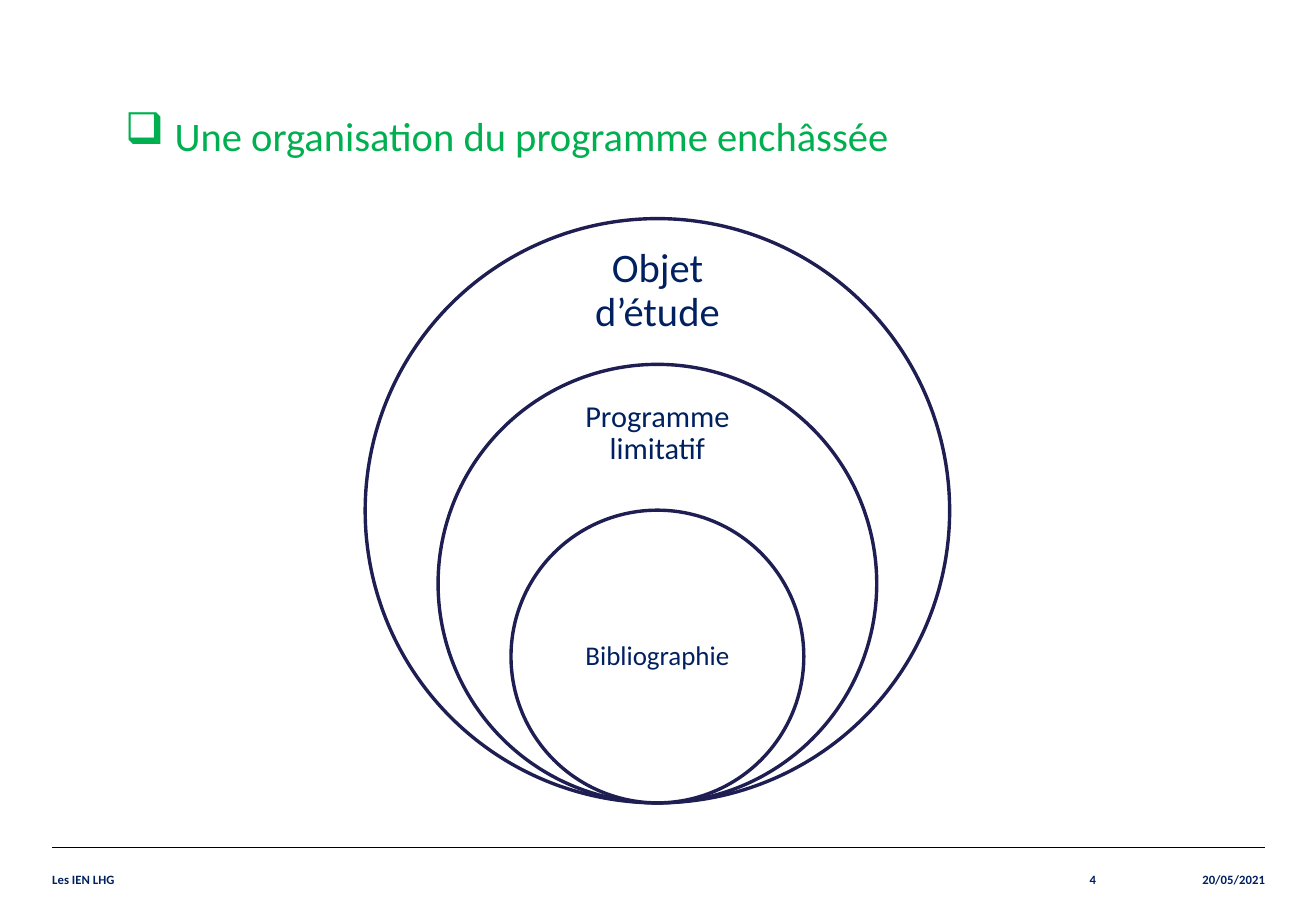
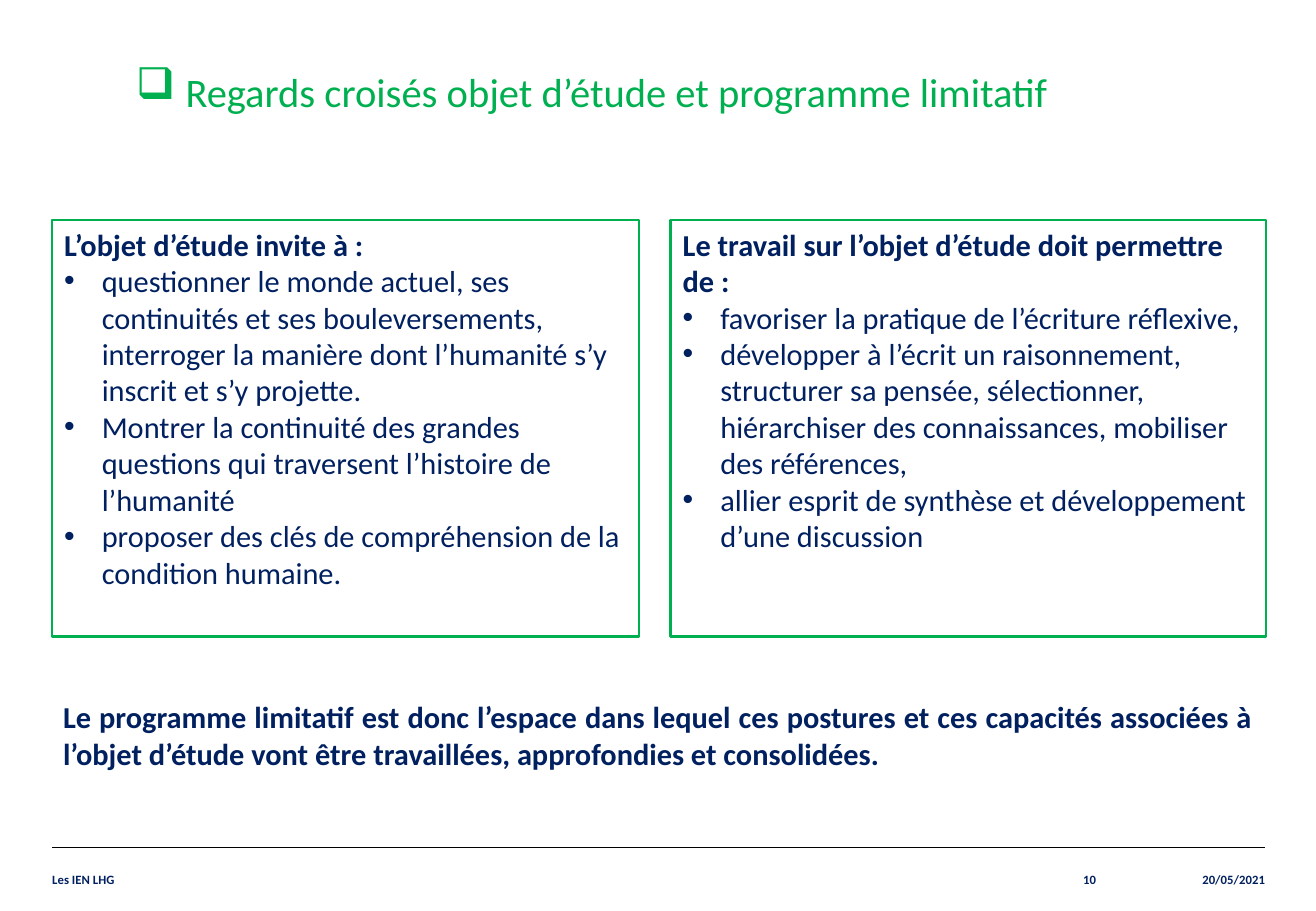
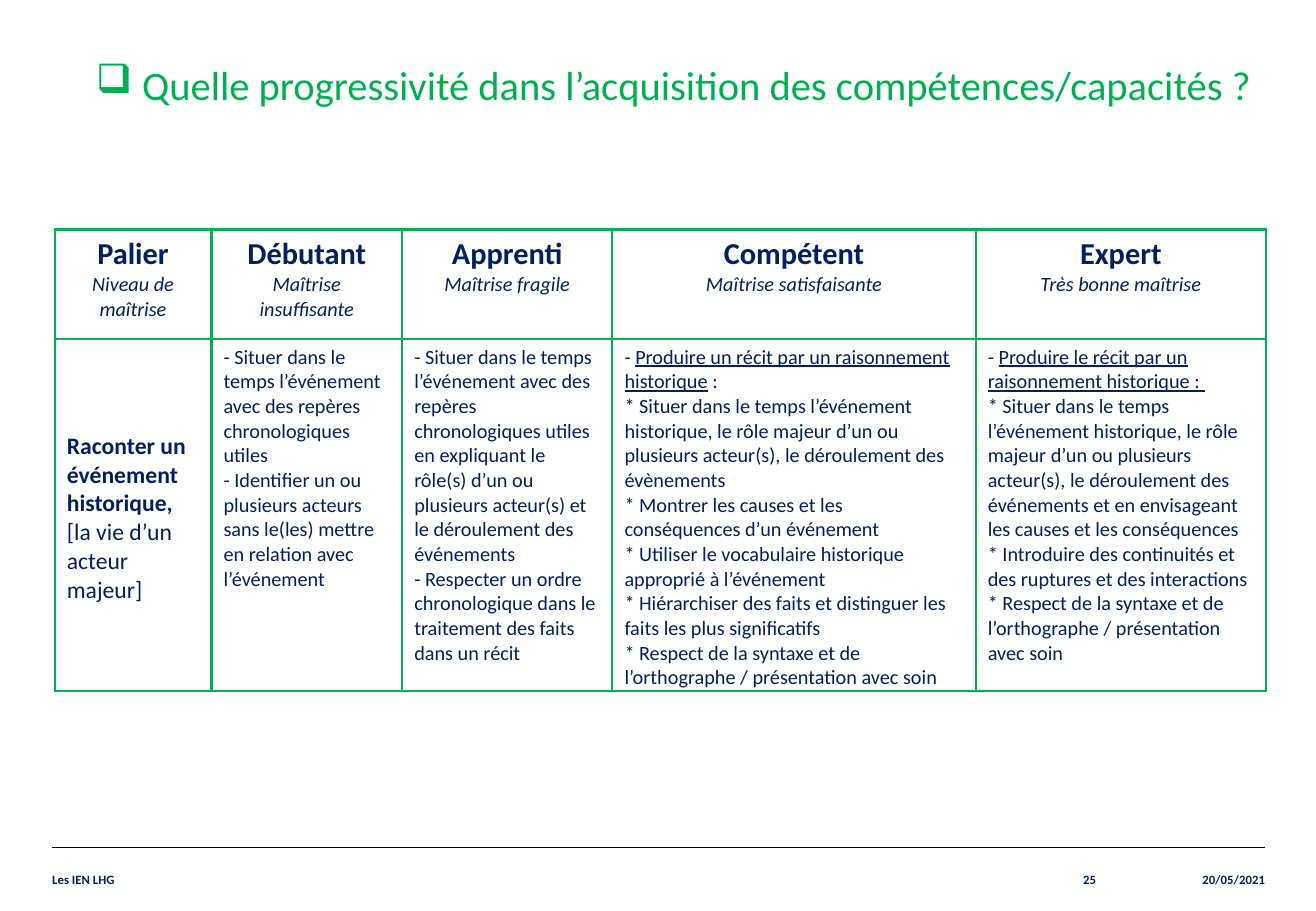
"""Build three slides on the programme's organisation, aims and skill levels."""
from lxml import etree
from pptx import Presentation
from pptx.dml.color import RGBColor
from pptx.enum import shapes, text
from pptx.oxml import ns
from pptx.util import Inches, Pt

NAVY, GREEN, RING, WHITE, BLACK = "002060", "00B050", "1E1E52", "FFFFFF", "000000"
colour = RGBColor.from_string
MIDDLE, TOP = text.MSO_ANCHOR.MIDDLE, text.MSO_ANCHOR.TOP
LEFT, CENTER, RIGHT = text.PP_ALIGN.LEFT, text.PP_ALIGN.CENTER, text.PP_ALIGN.RIGHT


def write(para, content, size, style="", hue=NAVY):
    span = para.add_run()
    span.text = content
    span.font.name, span.font.size = "Calibri", Pt(size)
    span.font.bold, span.font.italic = "b" in style, "i" in style
    span.font.underline = "u" in style
    span.font.color.rgb = colour(hue)


def add_bullet(para, indent, typeface, mark, hue):
    props = para._p.get_or_add_pPr()
    props.set("marL", str(Inches(indent)))
    props.set("indent", str(-Inches(indent)))
    tint = etree.SubElement(props, ns.qn("a:buClr"))
    etree.SubElement(tint, ns.qn("a:srgbClr"), val=hue)
    etree.SubElement(props, ns.qn("a:buFont"), typeface=typeface)
    etree.SubElement(props, ns.qn("a:buChar"), char=mark)


deck = Presentation()
deck.slide_width, deck.slide_height = Inches(10.83), Inches(7.5)

headings = [
    ("Une organisation du programme enchâssée", "4", (0.93, 0.84, 8.24, 0.54), 0.31),
    ("Regards croisés objet d’étude et programme limitatif", "10", (1.02, 0.47, 9.39, 0.54), 0.31),
    ("Quelle progressivité dans l’acquisition des compétences/capacités ?", "25",
     (0.69, 0.44, 9.72, 0.91), 0.38),
]
pages = []
for heading, number, area, indent in headings:
    page = deck.slides.add_slide(deck.slide_layouts[5])
    pages.append(page)
    title = page.shapes.title
    title.left, title.top, title.width, title.height = [Inches(side) for side in area]
    frame = title.text_frame
    frame.auto_size, frame.vertical_anchor = text.MSO_AUTO_SIZE.NONE, TOP
    para = frame.paragraphs[0]
    para.alignment = LEFT
    add_bullet(para, indent, "Wingdings", "q", GREEN)
    if indent == 0.31:
        write(para, " ", 26, hue=GREEN)
    write(para, heading, 24, hue=GREEN)

    rule = page.shapes.add_connector(
        shapes.MSO_CONNECTOR.STRAIGHT, Inches(0.43), Inches(6.98), Inches(10.41), Inches(6.98))
    rule.line.color.rgb, rule.line.width = colour(BLACK), Pt(0.75)
    etree.SubElement(rule._element.spPr, ns.qn("a:effectLst"))

    for content, left, width, align in [("Les IEN LHG", 0.43, 6.99, LEFT),
                                        (number, 7.42, 1.6, RIGHT),
                                        ("20/05/2021", 9.02, 1.39, RIGHT)]:
        box = page.shapes.add_textbox(Inches(left), Inches(6.98), Inches(width), Inches(0.52))
        frame = box.text_frame
        frame.word_wrap, frame.vertical_anchor = True, MIDDLE
        frame.margin_left = frame.margin_right = frame.margin_top = frame.margin_bottom = 0
        frame.paragraphs[0].alignment = align
        write(frame.paragraphs[0], content, 7.5, "b")

circles_page, views_page, levels_page = pages

rings = [
    ("Objet d’étude", 4.81, 2.04, 0.72, 0.19, 24),
    ("Programme limitatif", 3.61, 3.23, 0.68, 0.14, 18),
    ("Bibliographie", 2.41, 4.81, 1.2, 0.12, 16),
]
for label, diameter, top, height, inset, size in rings:
    ring = circles_page.shapes.add_shape(
        shapes.MSO_SHAPE.OVAL, Inches(5.41 - diameter / 2), Inches(6.61 - diameter),
        Inches(diameter), Inches(diameter))
    ring.shadow.inherit = False
    ring.fill.solid()
    ring.fill.fore_color.rgb = colour(WHITE)
    ring.line.color.rgb, ring.line.width = colour(RING), Pt(2)
    box = circles_page.shapes.add_textbox(Inches(4.57), Inches(top), Inches(1.68), Inches(height))
    frame = box.text_frame
    frame.word_wrap, frame.vertical_anchor = True, MIDDLE
    frame.margin_left = frame.margin_right = Inches(inset)
    frame.margin_top = frame.margin_bottom = Inches(inset)
    para = frame.paragraphs[0]
    para.alignment, para.line_spacing = CENTER, 0.9
    write(para, label, size)

panels = [
    (0.43, 4.83, "L’objet d’étude invite à :", [
        "questionner le monde actuel, ses continuités et ses bouleversements, interroger la "
        "manière dont l’humanité s’y inscrit et s’y projette.",
        "Montrer la continuité des grandes questions qui traversent l’histoire de l’humanité",
        "proposer des clés de compréhension de la condition humaine."]),
    (5.52, 4.9, "Le travail sur l’objet d’étude doit permettre de :", [
        "favoriser la pratique de l’écriture réflexive,",
        "développer à l’écrit un raisonnement, structurer sa pensée, sélectionner, "
        "hiérarchiser des connaissances, mobiliser des références,",
        "allier esprit de synthèse et développement d’une discussion"]),
]
for left, width, lead, points in panels:
    panel = views_page.shapes.add_shape(
        shapes.MSO_SHAPE.RECTANGLE, Inches(left), Inches(1.81), Inches(width), Inches(3.43))
    panel.shadow.inherit = False
    panel.fill.background()
    panel.line.color.rgb, panel.line.width = colour(GREEN), Pt(1.5)
    frame = panel.text_frame
    frame.word_wrap, frame.vertical_anchor = True, TOP
    frame.paragraphs[0].alignment = LEFT
    write(frame.paragraphs[0], lead, 18, "b")
    for point in points:
        para = frame.add_paragraph()
        para.alignment = LEFT
        add_bullet(para, 0.31, "Arial", "•", NAVY)
        write(para, point, 18)

box = views_page.shapes.add_textbox(Inches(0.42), Inches(5.7), Inches(9.99), Inches(1.01))
frame = box.text_frame
frame.word_wrap = True
frame.paragraphs[0].alignment = text.PP_ALIGN.JUSTIFY
write(frame.paragraphs[0],
      "Le programme limitatif est donc l’espace dans lequel ces postures et ces capacités "
      "associées à l’objet d’étude vont être travaillées, approfondies et consolidées.", 18, "b")

levels = [("Palier", "Niveau de maîtrise"), ("Débutant", "Maîtrise insuffisante"),
          ("Apprenti", "Maîtrise fragile"), ("Compétent", "Maîtrise satisfaisante"),
          ("Expert", "Très bonne maîtrise")]
header = [[[(name, 18, "b")], [(mastery, 12, "i")]] for name, mastery in levels]
care = "* Respect de la syntaxe et de l’orthographe / présentation avec soin"
skills = [
    [[("Raconter un événement historique, ", 14, "b"), ("[la vie d’un acteur majeur]", 14, "")]],
    [[(line, 12, "")] for line in [
        "- Situer dans le temps l’événement avec des repères chronologiques utiles",
        "- Identifier un ou plusieurs acteurs",
        "sans le(les) mettre en relation avec l’événement"]],
    [[(line, 12, "")] for line in [
        "- Situer dans le temps l’événement avec des repères chronologiques utiles en expliquant "
        "le rôle(s) d’un ou plusieurs acteur(s) et le déroulement des événements",
        "- Respecter un ordre chronologique dans le traitement des faits dans un récit"]],
    [[("- ", 12, ""), ("Produire un récit par un raisonnement historique", 12, "u"), (" :", 12, "")]]
    + [[(line, 12, "")] for line in [
        "* Situer dans le temps l’événement historique, le rôle majeur d’un ou plusieurs "
        "acteur(s), le déroulement des évènements",
        "* Montrer les causes et les conséquences d’un événement",
        "* Utiliser le vocabulaire historique approprié à l’événement",
        "* Hiérarchiser des faits et distinguer les faits les plus significatifs",
        care]],
    [[("- ", 12, ""), ("Produire le récit par un raisonnement historique : ", 12, "u")]]
    + [[(line, 12, "")] for line in [
        "* Situer dans le temps l’événement historique, le rôle majeur d’un ou plusieurs "
        "acteur(s), le déroulement des événements et en envisageant les causes et les "
        "conséquences",
        "* Introduire des continuités et des ruptures et des interactions",
        care]],
]
grid = levels_page.shapes.add_table(
    2, 5, Inches(0.45), Inches(1.89), Inches(9.97), Inches(3.8)).table
for column, width in zip(grid.columns, [1.29, 1.57, 1.73, 2.99, 2.39]):
    column.width = Inches(width)
for row, height in zip(grid.rows, [0.9, 2.9]):
    row.height = Inches(height)
for row_index, row in enumerate([header, skills]):
    for column_index, lines in enumerate(row):
        cell = grid.cell(row_index, column_index)
        props = cell._tc.get_or_add_tcPr()
        for side in ["lnL", "lnR", "lnT", "lnB"]:
            edge = etree.SubElement(props, ns.qn("a:" + side), w=str(Pt(1.5)))
            paint = etree.SubElement(edge, ns.qn("a:solidFill"))
            etree.SubElement(paint, ns.qn("a:srgbClr"), val=GREEN)
        cell.fill.background()
        cell.vertical_anchor = MIDDLE if row is skills and column_index == 0 else TOP
        if row is skills:
            cell.margin_bottom = 0
        for index, spans in enumerate(lines):
            frame = cell.text_frame
            para = frame.add_paragraph() if index else frame.paragraphs[0]
            para.alignment = CENTER if row is header else LEFT
            for content, size, style in spans:
                write(para, content, size, style)

deck.save("out.pptx")
